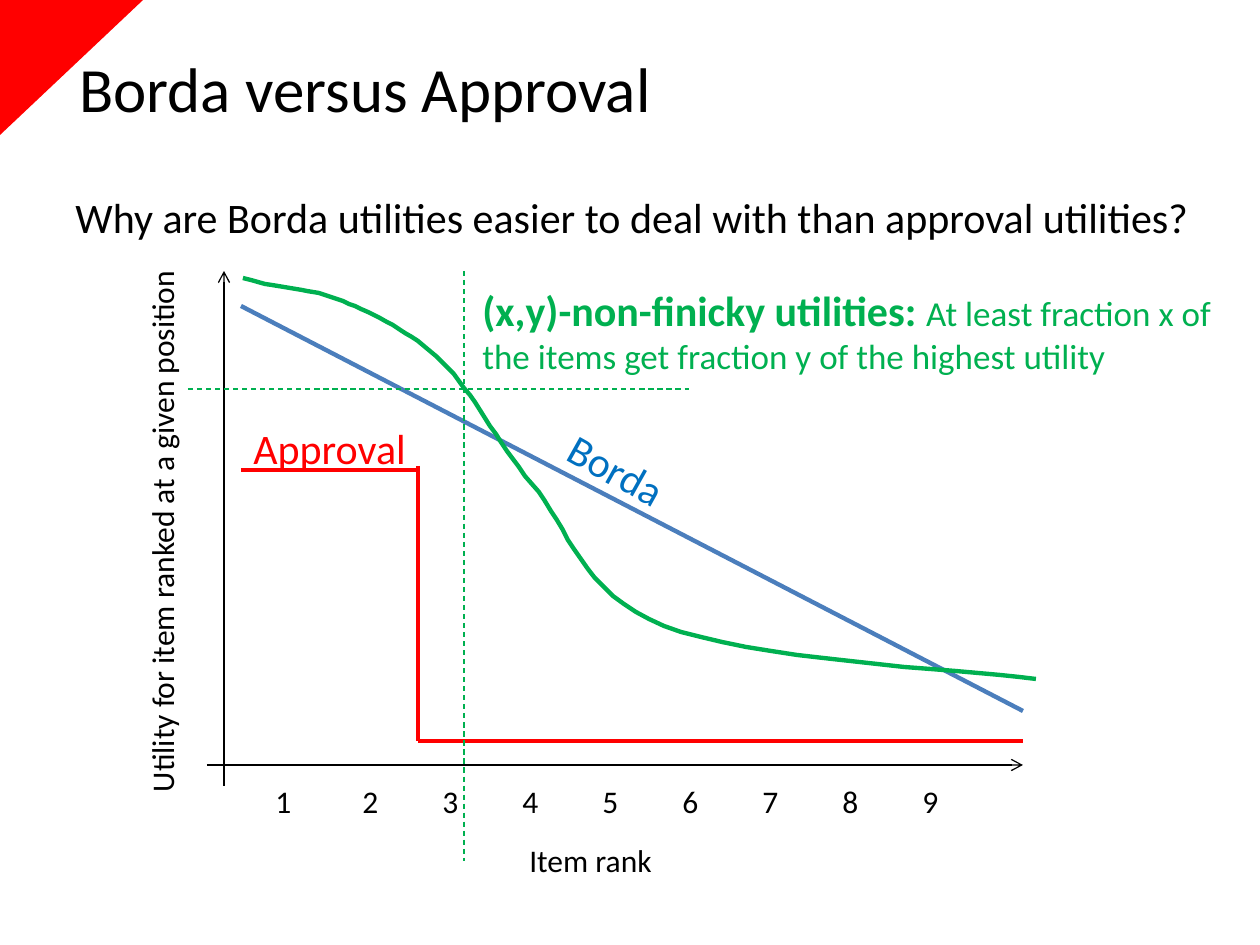
from lxml import etree
from pptx import Presentation, util as u
from pptx.dml.color import RGBColor
from pptx.enum import dml, shapes, text
from pptx.oxml.ns import qn

PX = 914400 // 126
BLACK = RGBColor(0, 0, 0)
RED = RGBColor(0xFF, 0, 0)
BLUE = RGBColor(0x4B, 0x7E, 0xBC)
LABEL_BLUE = RGBColor(0, 0x70, 0xC0)
GREEN = RGBColor(0, 0xB0, 0x50)

# text, box (left, top, width, height), format
LABELS = [
    ("Borda versus Approval", (67, 37, 1134, 100),
     dict(size=36, anchor=text.MSO_ANCHOR.MIDDLE)),
    ("Why are Borda utilities easier to deal with than approval utilities?",
     (63, 185, 1154, 135), dict(size=24)),
    ("Utility for item ranked at a given position", (-115, 503, 553, 50),
     dict(rotation=270, wrap=False)),
    ("Item rank", (517, 835, 149, 50), dict(wrap=False)),
    ("Borda", (554, 438, 127, 63),
     dict(size=24, color=LABEL_BLUE, rotation=29.3, wrap=False)),
    ("Approval", (241, 416, 179, 63), dict(size=24, color=RED, wrap=False)),
]
RANKS = range(1, 10)
RANK_BOX = (263, 776, 709, 50)
FIRST_TAB, TAB_STEP = 87, 80

DEFINITION_BOX = (470, 278, 790, 106)
DEFINITION_TERM = "(x,y)-non-finicky utilities: "
DEFINITION = ("At least fraction x of the items get fraction y "
              "of the highest utility")

# start, end, format
AXES = [((224, 786), (224, 271)), ((207, 765), (1023, 765))]
BORDA = ((241, 306), (1023, 711))
APPROVAL = [((241, 470), (420, 470)), ((418, 466), (418, 741)),
            ((418, 741), (1023, 741))]
THRESHOLDS = [((188, 389), (689, 389)), ((464, 271), (464, 861))]

# Bezier knots and handles: start, then two handles and an end per segment
UTILITY_CURVE = [
    (243, 278),
    (285, 291), (309, 287), (343, 301),
    (375, 315), (411, 331), (442, 362),
    (474, 392), (495, 440), (532, 484),
    (570, 528), (580, 593), (664, 626),
    (748, 659), (953, 669), (1036, 679),
]
STEPS = 16


def add_text(s, content, box, size=18, color=BLACK, bold=False, rotation=0,
             wrap=True, anchor=text.MSO_ANCHOR.TOP):
    sp = s.shapes.add_textbox(*(v * PX for v in box))
    sp.rotation = rotation
    tf = sp.text_frame
    tf.word_wrap = wrap
    tf.vertical_anchor = anchor
    add_run(tf.paragraphs[0], content, size, color, bold)
    return tf.paragraphs[0]


def add_run(p, content, size, color, bold=False):
    r = p.add_run()
    r.text = content
    r.font.name = "Calibri"
    r.font.size = u.Pt(size)
    r.font.bold = bold
    r.font.color.rgb = color


def add_line(s, start, end, color=BLACK, width=0.75, dashed=False, arrow=False):
    cx = s.shapes.add_connector(shapes.MSO_CONNECTOR.STRAIGHT,
                                *(v * PX for v in start + end))
    cx.line.color.rgb = color
    cx.line.width = u.Pt(width)
    if dashed:
        cx.line.dash_style = dml.MSO_LINE.DASH
    if arrow:
        etree.SubElement(cx.line._get_or_add_ln(), qn("a:tailEnd"), type="arrow")
    etree.SubElement(cx._element.spPr, qn("a:effectLst"))


def bezier_points(knots):
    """Sample a chain of cubic Bezier segments, without its first point."""
    for i in range(0, len(knots) - 1, 3):
        a, b, c, d = knots[i:i + 4]
        for step in range(1, STEPS + 1):
            t = step / STEPS
            yield tuple((1 - t) ** 3 * a[k] + 3 * (1 - t) ** 2 * t * b[k]
                        + 3 * (1 - t) * t ** 2 * c[k] + t ** 3 * d[k]
                        for k in (0, 1))


def add_curve(s, knots, color, width):
    fb = s.shapes.build_freeform(*knots[0], scale=PX)
    fb.add_line_segments(bezier_points(knots), close=False)
    sp = fb.convert_to_shape()
    sp.shadow.inherit = False
    sp.fill.background()
    sp.line.color.rgb = color
    sp.line.width = u.Pt(width)


def add_ranks(s):
    p = add_text(s, "\t".join(map(str, RANKS)), RANK_BOX, wrap=False)
    tabs = etree.SubElement(p._p.get_or_add_pPr(), qn("a:tabLst"))
    for i in range(len(RANKS) - 1):
        etree.SubElement(tabs, qn("a:tab"), algn="l",
                         pos=str((FIRST_TAB + i * TAB_STEP) * PX))


def main():
    prs = Presentation()
    prs.slide_width, prs.slide_height = u.Inches(10), u.Inches(7.5)
    s = prs.slides.add_slide(prs.slide_layouts[6])

    corner = s.shapes.add_shape(shapes.MSO_SHAPE.RIGHT_TRIANGLE,
                                *(v * PX for v in (4, -4, 135, 143)))
    corner.rotation = 90
    corner.shadow.inherit = False
    corner.fill.solid()
    corner.fill.fore_color.rgb = RED
    corner.line.fill.background()

    for axis in AXES:
        add_line(s, *axis, arrow=True)
    add_line(s, *BORDA, color=BLUE, width=2.5)
    for part in APPROVAL:
        add_line(s, *part, color=RED, width=2.5)
    for label, box, style in LABELS:
        add_text(s, label, box, **style)
    add_ranks(s)
    add_curve(s, UTILITY_CURVE, GREEN, 2.5)
    for threshold in THRESHOLDS:
        add_line(s, *threshold, color=GREEN, dashed=True)
    p = add_text(s, DEFINITION_TERM, DEFINITION_BOX, size=24, color=GREEN,
                 bold=True)
    add_run(p, DEFINITION, 20, GREEN)
    prs.save("out.pptx")


if __name__ == "__main__":
    main()
